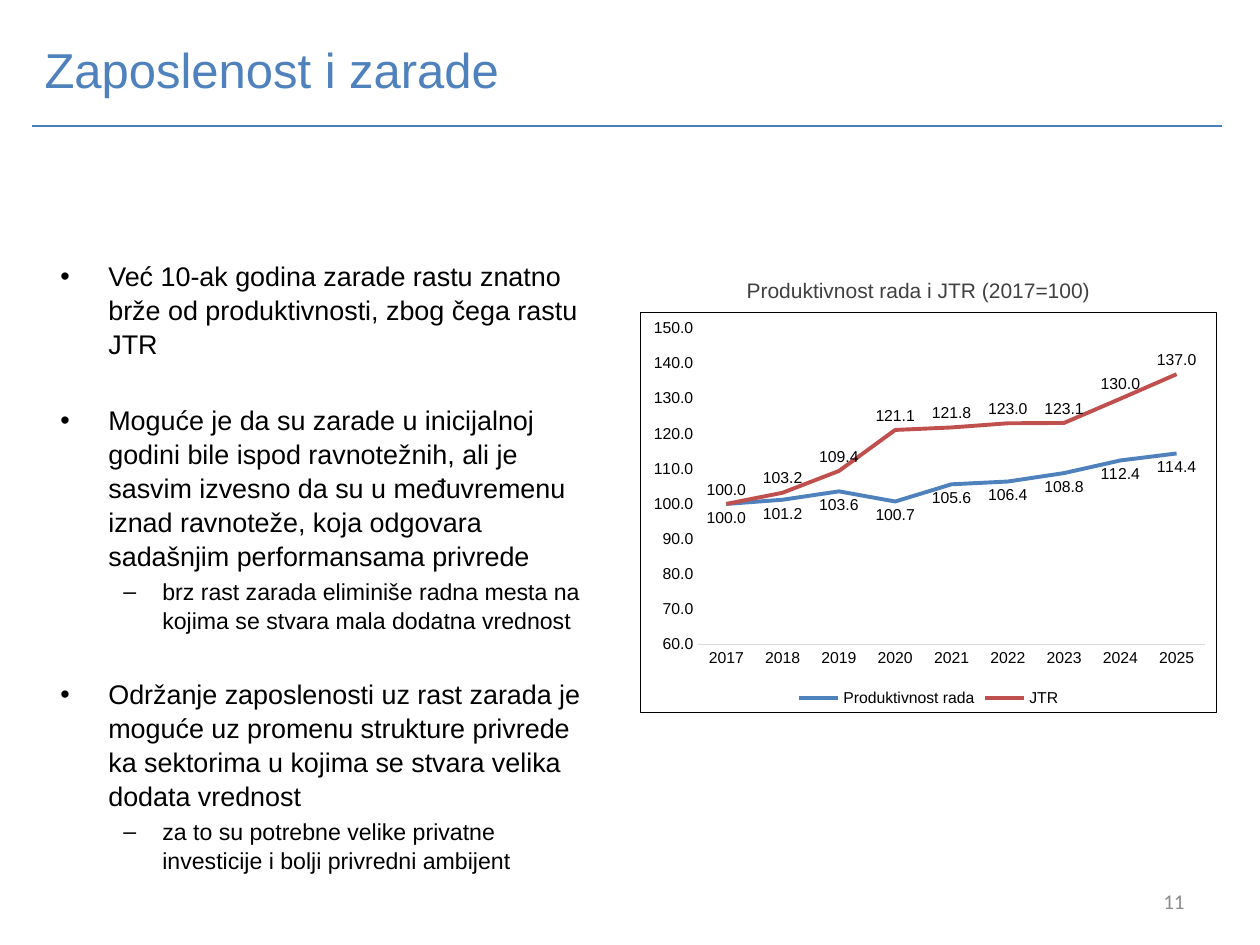
"""Build the slide on employment and wages with its productivity and unit labour cost chart."""
import pptx
import pptx.chart.data
import pptx.dml.color
import pptx.enum.chart
import pptx.enum.shapes
import pptx.enum.text
import pptx.oxml
import pptx.oxml.ns
import pptx.util
from lxml import etree

PX = 914400 / 126
BLUE = pptx.dml.color.RGBColor(0x4F, 0x81, 0xBD)
RULE_BLUE = pptx.dml.color.RGBColor(0x4B, 0x7E, 0xBC)
RED = pptx.dml.color.RGBColor(0xC0, 0x50, 0x4D)
BLACK = pptx.dml.color.RGBColor(0, 0, 0)
DARK_GRAY = pptx.dml.color.RGBColor(0x40, 0x40, 0x40)
GRAY = pptx.dml.color.RGBColor(0x8C, 0x8C, 0x8C)
AXIS_GRAY = pptx.dml.color.RGBColor(0xD9, 0xD9, 0xD9)
ALIGN = pptx.enum.text.PP_ALIGN
ANCHOR = pptx.enum.text.MSO_ANCHOR


def box(*lengths):
    return [pptx.util.Emu(round(length * PX)) for length in lengths]


def style(font, size, color, name="Arial"):
    font.size = pptx.util.Pt(size)
    font.name = name
    font.color.rgb = color


deck = pptx.Presentation()
deck.slide_width, deck.slide_height = box(1260, 945)
slide = deck.slides.add_slide(deck.slide_layouts[5])

heading = slide.shapes.title
heading.left, heading.top, heading.width, heading.height = box(32, -10, 1134, 157)
heading.text_frame.vertical_anchor = ANCHOR.MIDDLE
heading_line = heading.text_frame.paragraphs[0]
heading_line.alignment = ALIGN.LEFT
heading_run = heading_line.add_run()
heading_run.text = "Zaposlenost i zarade"
style(heading_run.font, 28, BLUE)

rule = slide.shapes.add_connector(
    pptx.enum.shapes.MSO_CONNECTOR.STRAIGHT, *box(32, 126, 1222, 126))
rule.line.color.rgb = RULE_BLUE
rule.line.width = pptx.util.Pt(0.75)
etree.SubElement(rule._element.spPr, pptx.oxml.ns.qn("a:effectLst"))

points = [
    (0, "Već 10-ak godina zarade rastu znatno brže od produktivnosti, zbog čega rastu JTR"),
    (0, "Moguće je da su zarade u inicijalnoj godini bile ispod ravnotežnih, ali je sasvim "
        "izvesno da su u međuvremenu iznad ravnoteže, koja odgovara sadašnjim "
        "performansama privrede"),
    (1, "brz rast zarada eliminiše radna mesta na kojima se stvara mala dodatna vrednost"),
    (0, "Održanje zaposlenosti uz rast zarada je moguće uz promenu strukture privrede ka "
        "sektorima u kojima se stvara velika dodata vrednost"),
    (1, "za to su potrebne velike privatne investicije i bolji privredni ambijent"),
]
levels = [("•", 48, 48, 15.4, 24), ("–", 102, 39, 13.2, 2.5)]
arguments = slide.shapes.add_textbox(*box(48, 252, 557, 624)).text_frame
arguments.word_wrap = True
for index, (level, wording) in enumerate(points):
    bullet, margin, hanging, size, gap = levels[level]
    point = arguments.paragraphs[0] if index == 0 else arguments.add_paragraph()
    point.level = level
    properties = point._p.get_or_add_pPr()
    properties.set("marL", str(round(margin * PX)))
    properties.set("indent", str(-round(hanging * PX)))
    etree.SubElement(properties, pptx.oxml.ns.qn("a:buFont")).set("typeface", "Arial")
    etree.SubElement(properties, pptx.oxml.ns.qn("a:buChar")).set("char", bullet)
    point.line_spacing = 1.05
    if index:
        point.space_before = pptx.util.Pt(gap)
    point_run = point.add_run()
    point_run.text = wording
    style(point_run.font, size, BLACK)

captions = [
    ("11", (903, 876, 294, 50), 12, GRAY, "Calibri", ALIGN.RIGHT, ANCHOR.MIDDLE),
    ("Produktivnost rada i JTR (2017=100)", (656, 271, 525, 38), 12, DARK_GRAY, "Arial",
     ALIGN.CENTER, ANCHOR.TOP),
]
for wording, place, size, color, typeface, alignment, anchor in captions:
    caption = slide.shapes.add_textbox(*box(*place)).text_frame
    caption.word_wrap = True
    caption.vertical_anchor = anchor
    caption.paragraphs[0].alignment = alignment
    caption_run = caption.paragraphs[0].add_run()
    caption_run.text = wording
    style(caption_run.font, size, color, typeface)

LABEL = pptx.enum.chart.XL_LABEL_POSITION
indices = [
    ("Produktivnost rada", BLUE, LABEL.BELOW,
     [100, 101.2, 103.6, 100.7, 105.6, 106.4, 108.8, 112.4, 114.4]),
    ("JTR", RED, LABEL.ABOVE,
     [100, 103.2, 109.4, 121.1, 121.8, 123, 123.1, 130, 137]),
]
chart_data = pptx.chart.data.CategoryChartData(number_format="0.0")
chart_data.categories = [str(year) for year in range(2017, 2026)]
for name, color, position, values in indices:
    chart_data.add_series(name, values)
chart = slide.shapes.add_chart(
    pptx.enum.chart.XL_CHART_TYPE.LINE, *box(640, 312, 577, 401), chart_data).chart
chart.has_title = False
style(chart.font, 10, BLACK)
chart.has_legend = True
chart.legend.position = pptx.enum.chart.XL_LEGEND_POSITION.BOTTOM
chart.legend.include_in_layout = False
style(chart.legend.font, 9, BLACK)

years, scale = chart.category_axis, chart.value_axis
for axis in (years, scale):
    axis.major_tick_mark = axis.minor_tick_mark = pptx.enum.chart.XL_TICK_MARK.NONE
    axis.has_major_gridlines = False
    style(axis.tick_labels.font, 9, BLACK)
years.format.line.color.rgb = AXIS_GRAY
years.format.line.width = pptx.util.Pt(0.75)
scale.format.line.fill.background()
scale.minimum_scale, scale.maximum_scale, scale.major_unit = 60, 150, 10
scale.tick_labels.number_format = "0.0"
scale.tick_labels.number_format_is_linked = False

for series, (name, color, position, values) in zip(chart.plots[0].series, indices):
    series.smooth = False
    series.format.line.color.rgb = color
    series.format.line.width = pptx.util.Pt(2.25)
    series.marker.style = pptx.enum.chart.XL_MARKER_STYLE.NONE
    labels = series.data_labels
    labels.show_value = True
    labels.position = position
    labels.number_format = "0.0"
    labels.number_format_is_linked = False
    style(labels.font, 9, BLACK)

chart_part = chart._chartSpace.chart
plot_area = chart_part.plotArea
for automatic in plot_area.findall(pptx.oxml.ns.qn("c:layout")):
    plot_area.remove(automatic)
plot_area.insert(0, pptx.oxml.parse_xml(
    f'<c:layout {pptx.oxml.ns.nsdecls("c")}><c:manualLayout>'
    '<c:layoutTarget val="inner"/><c:xMode val="edge"/><c:yMode val="edge"/>'
    '<c:x val="0.1"/><c:y val="0.04"/><c:w val="0.88"/><c:h val="0.79"/>'
    '</c:manualLayout></c:layout>'))
chart_part.addnext(pptx.oxml.parse_xml(
    f'<c:spPr {pptx.oxml.ns.nsdecls("c", "a")}><a:noFill/><a:ln w="9525"><a:solidFill>'
    f'<a:srgbClr val="{BLACK}"/></a:solidFill></a:ln></c:spPr>'))

deck.save("out.pptx")
